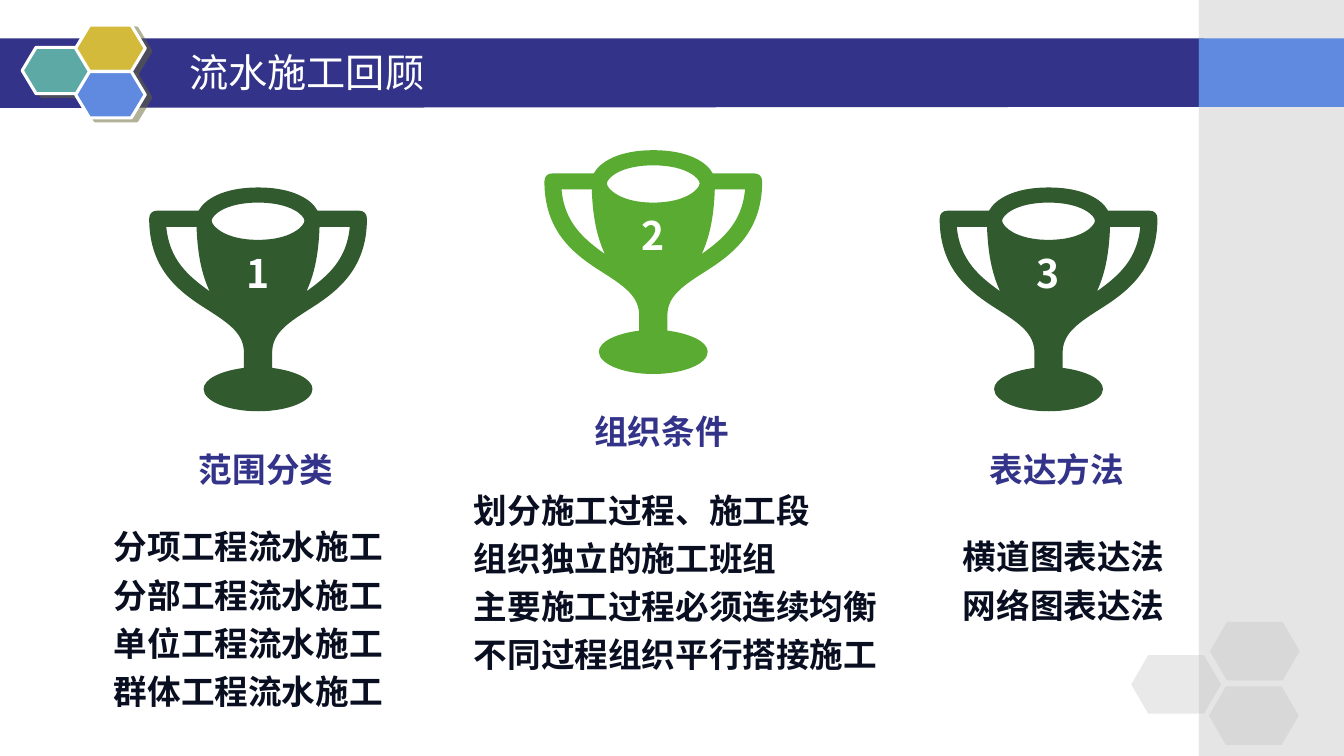
"""Build a slide that reviews flow construction with three numbered trophies."""
from dataclasses import dataclass

from lxml import etree
from pptx import Presentation
from pptx.dml.color import RGBColor
from pptx.enum.shapes import MSO_SHAPE
from pptx.enum.text import MSO_ANCHOR, MSO_AUTO_SIZE, PP_ALIGN
from pptx.oxml.ns import qn
from pptx.util import Inches, Pt

RECT, HEX = MSO_SHAPE.RECTANGLE, MSO_SHAPE.HEXAGON
LEFT, CENTER = PP_ALIGN.LEFT, PP_ALIGN.CENTER
MIDDLE, TOP = MSO_ANCHOR.MIDDLE, MSO_ANCHOR.TOP
GROW, FIXED = MSO_AUTO_SIZE.SHAPE_TO_FIT_TEXT, MSO_AUTO_SIZE.NONE

Part = list[tuple[float, float]]
Ring = list[Part]


@dataclass(frozen=True)
class Theme:
    navy: str = "333389"
    blue: str = "5F8ADF"
    teal: str = "5DA9A5"
    gold: str = "D4BA3A"
    gray: str = "C0C0C0"
    shade: str = "666633"
    white: str = "FFFFFF"
    dark: str = "315B2F"
    green: str = "5AAB31"
    ink: str = "090F21"
    face: str = "DejaVu Sans"
    digit: str = "Noto Sans CJK SC"
    large: float = 28
    small: float = 24
    gap: float = 5.6


@dataclass(frozen=True)
class Box:
    left: float
    top: float
    width: float
    height: float


@dataclass(frozen=True)
class Style:
    size: float
    color: str
    face: str
    bold: bool = True
    align: int = LEFT
    gap: float = 0
    pitch: float = 1.0


@dataclass(frozen=True)
class Cup:
    top: float
    color: str
    title: str
    body: Box
    lines: tuple[str, ...]
    pitch: float = 1.0


@dataclass(frozen=True)
class Tile:
    left: float
    top: float
    color: str


THEME = Theme()
AXIS, STEP = 2.56, 3.92

CUPS = (
    Cup(1.86, THEME.dark, "范围分类", Box(1.13, 5.14, 2.85, 1.94),
        ("分项工程流水施工分部工程流水施工单位工程流水施工群体工程流水施工",), 1.2),
    Cup(1.49, THEME.green, "组织条件", Box(4.7, 4.86, 4.14, 1.86),
        ("划分施工过程、施工段", "组织独立的施工班组",
         "主要施工过程必须连续均衡", "不同过程组织平行搭接施工")),
    Cup(1.86, THEME.dark, "表达方法", Box(9.55, 5.32, 2.14, 1.18),
        ("横道图表达法", "网络图表达法")),
)
BADGE = (Tile(0.22, 0.47, THEME.teal), Tile(0.75, 0.25, THEME.gold),
         Tile(0.75, 0.71, THEME.blue))
FAINT = (Tile(11.22, 6.5, THEME.gray), Tile(12, 6.17, THEME.gray),
         Tile(11.99, 6.81, THEME.gray))

BAND = [[(-0.01, 0.38)], [(11.94, 0.38)], [(11.93, 1.06)], [(-0.01, 1.07)]]
SIDE = [
    [(0, 0)], [(-0.35, 0), (-0.53, 0.12), (-0.59, 0.23)], [(-1, 0.23)],
    [(-1.05, 0.23), (-1.08, 0.26), (-1.08, 0.31)],
    [(-1.08, 0.83), (-0.76, 1.05), (-0.49, 1.22)],
    [(-0.27, 1.36), (-0.14, 1.46), (-0.14, 1.64)], [(-0.14, 1.79)],
    [(-0.37, 1.82), (-0.54, 1.9), (-0.54, 2)],
    [(-0.54, 2.12), (-0.3, 2.22), (0, 2.22)],
]
GRIP = [
    [(-0.91, 0.39)], [(-0.61, 0.39)],
    [(-0.6, 0.69), (-0.55, 0.88), (-0.48, 1.03)],
    [(-0.69, 0.88), (-0.88, 0.72), (-0.91, 0.39)],
]
MOUTH = [
    [(0, 0.15)], [(-0.33, 0.15), (-0.46, 0.28), (-0.46, 0.33)],
    [(-0.46, 0.38), (-0.33, 0.52), (0, 0.52)],
]


def flip(ring: Ring) -> Ring:
    parts = [[ring[-1][-1]]]
    for prior, part in reversed(list(zip(ring, ring[1:]))):
        parts.append([*reversed(part[:-1]), prior[-1]])
    return [[(-x, y) for x, y in part] for part in parts]


def paint(shape, color: str, alpha: int = 100) -> None:
    shape.shadow.inherit = False
    shape.line.fill.background()
    shape.fill.solid()
    shape.fill.fore_color.rgb = RGBColor.from_string(color)
    if alpha < 100:
        tint = shape.fill._xPr.find(qn("a:solidFill"))[0]
        etree.SubElement(tint, qn("a:alpha"), val=str(alpha * 1000))


def draw_rings(slide, rings: list[Ring], color: str, left: float = 0, top: float = 0) -> None:
    pen, parts = None, []
    for ring in rings:
        spots = [[(Inches(left + x), Inches(top + y)) for x, y in part] for part in ring]
        if pen is None:
            pen = slide.shapes.build_freeform(*spots[0][0])
        else:
            pen.move_to(*spots[0][0])
        pen.add_line_segments([spot[-1] for spot in spots[1:]], close=True)
        parts += spots[1:]
    shape = pen.convert_to_shape()
    for node, part in zip(list(shape._element.iter(qn("a:lnTo"))), parts):
        if len(part) == 3:
            node.tag = qn("a:cubicBezTo")
            for rank, (x, y) in enumerate(part[:2]):
                node.insert(rank, etree.Element(qn("a:pt"), x=str(x - shape.left),
                                                y=str(y - shape.top)))
    paint(shape, color)


def draw_shape(slide, kind: int, box: Box, color: str, alpha: int = 100):
    shape = slide.shapes.add_shape(kind, Inches(box.left), Inches(box.top),
                                   Inches(box.width), Inches(box.height))
    paint(shape, color, alpha)
    return shape


def draw_badge(slide, tile: Tile) -> None:
    shape = draw_shape(slide, HEX, Box(tile.left, tile.top, 0.69, 0.46), tile.color)
    shape.adjustments[0] = 0.3
    shape.line.color.rgb = RGBColor.from_string(THEME.white)
    shape.line.width = Pt(2.25)
    glow = etree.SubElement(shape._element.spPr.find(qn("a:effectLst")), qn("a:outerShdw"),
                            blurRad="0", dist=str(Pt(4.5)), dir=str(27 * 60000),
                            algn="ctr", rotWithShape="0")
    tint = etree.SubElement(glow, qn("a:srgbClr"), val=THEME.shade)
    etree.SubElement(tint, qn("a:alpha"), val="50000")


def draw_text(slide, box: Box, lines: tuple[str, ...], style: Style,
              inset: float = 0, anchor: int = TOP, fit: int = GROW) -> None:
    frame = slide.shapes.add_textbox(Inches(box.left), Inches(box.top),
                                     Inches(box.width), Inches(box.height)).text_frame
    frame.word_wrap, frame.auto_size, frame.vertical_anchor = True, fit, anchor
    frame.margin_left = frame.margin_right = Inches(inset)
    frame.margin_top = frame.margin_bottom = Inches(inset / 2)
    frame.text = "\n".join(lines)
    for para in frame.paragraphs:
        para.alignment, para.line_spacing = style.align, style.pitch
        para.space_before = Pt(style.gap)
        for run in para.runs:
            font = run.font
            font.size, font.bold, font.name = Pt(style.size), style.bold, style.face
            font.color.rgb = RGBColor.from_string(style.color)
            etree.SubElement(font._element, qn("a:ea"), typeface=style.face)


def draw_cup(slide, rank: int, cup: Cup) -> None:
    axis = AXIS + STEP * rank
    rings = [SIDE + flip(SIDE)[1:], GRIP, flip(GRIP), MOUTH + flip(MOUTH)[1:]]
    draw_rings(slide, rings, cup.color, axis, cup.top)
    draw_text(slide, Box(axis - 0.58, cup.top + 0.61, 1.16, 0.47), (str(rank + 1),),
              Style(THEME.large, THEME.white, THEME.digit, align=CENTER))
    draw_text(slide, Box(axis - 1.08, cup.top + 2.59, 2.32, 0.4), (cup.title,),
              Style(THEME.small, THEME.navy, THEME.face, align=CENTER, gap=THEME.gap))
    draw_text(slide, cup.body, cup.lines,
              Style(THEME.small, THEME.ink, THEME.face, gap=THEME.gap, pitch=cup.pitch))


def main() -> None:
    deck = Presentation()
    deck.slide_width, deck.slide_height = Inches(13.33), Inches(7.5)
    slide = deck.slides.add_slide(deck.slide_layouts[6])
    draw_rings(slide, [BAND], THEME.navy)
    draw_shape(slide, RECT, Box(11.89, 0, 1.44, 7.5), THEME.gray, 40)
    draw_shape(slide, RECT, Box(11.89, 0.38, 1.44, 0.68), THEME.blue)
    for tile in BADGE:
        draw_badge(slide, tile)
    for tile in FAINT:
        shape = draw_shape(slide, HEX, Box(tile.left, tile.top, 0.89, 0.58), tile.color, 35)
        shape.adjustments[0] = 0.29
    for rank, cup in enumerate(CUPS):
        draw_cup(slide, rank, cup)
    draw_text(slide, Box(1.78, 0.42, 9.67, 0.58), ("流水施工回顾",),
              Style(THEME.large, THEME.white, THEME.face, bold=False), 0.1, MIDDLE, FIXED)
    deck.save("out.pptx")


if __name__ == "__main__":
    main()
